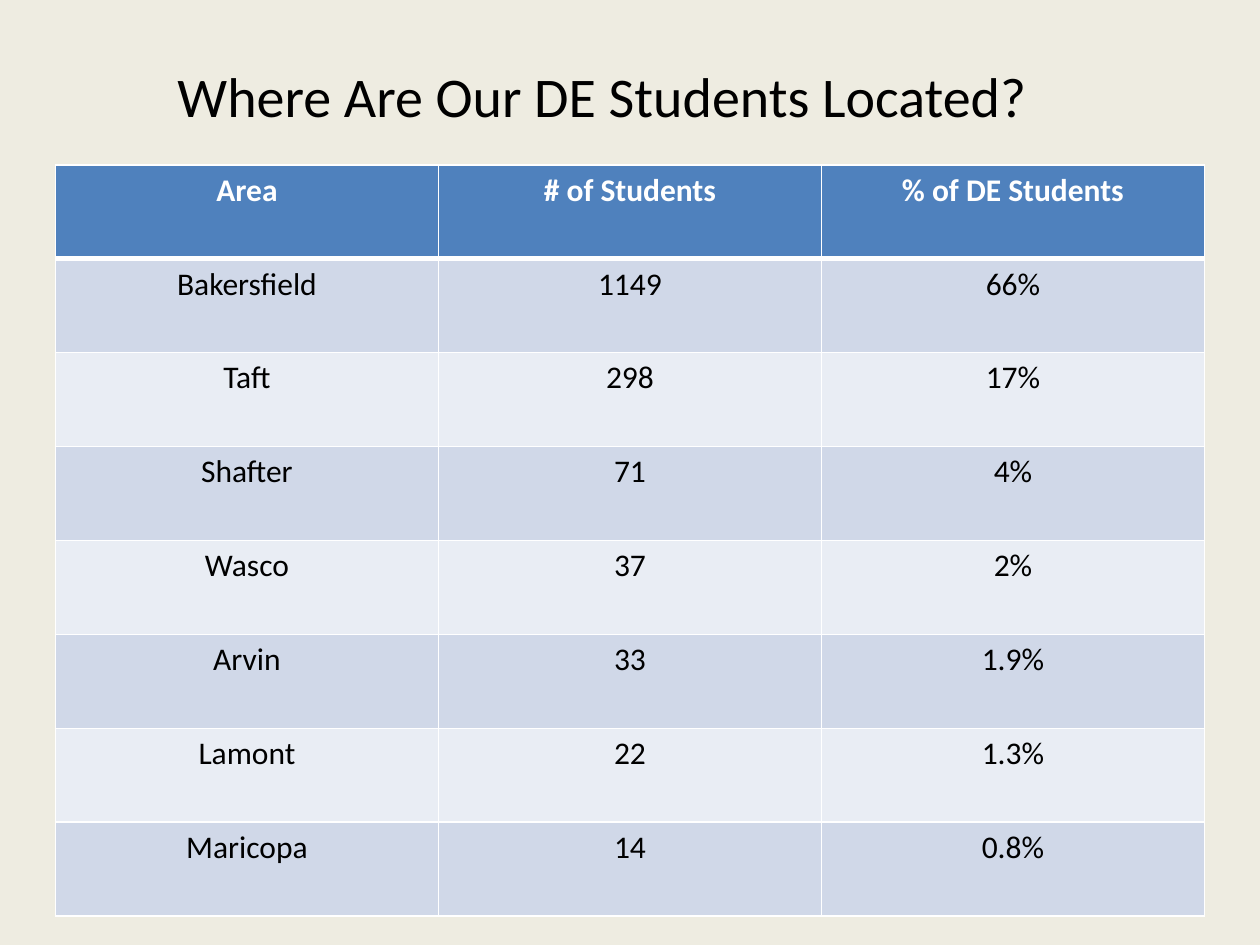
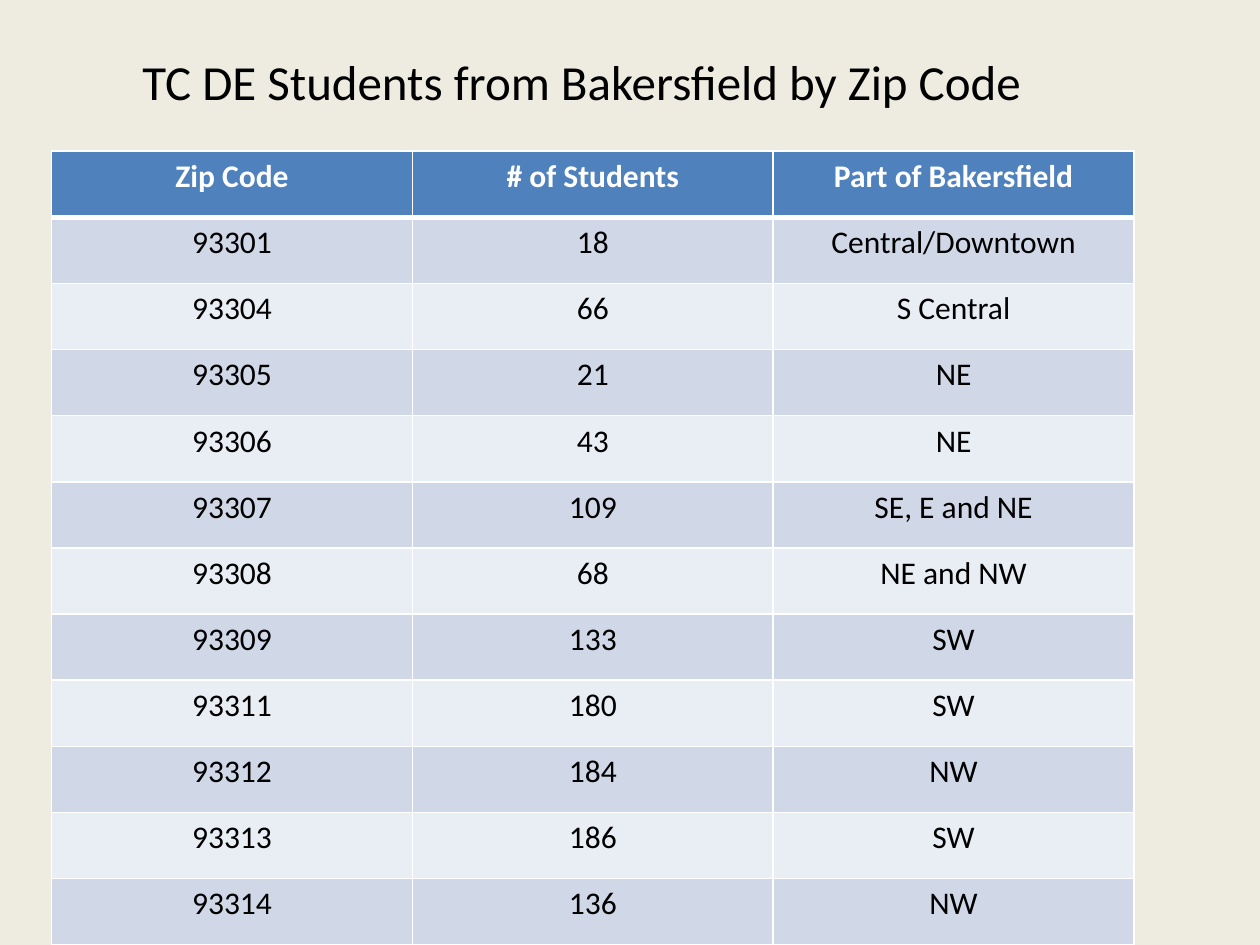
from dataclasses import dataclass

from lxml.etree import SubElement
from pptx import Presentation
from pptx.dml.color import RGBColor as RGB
from pptx.enum.text import MSO_AUTO_SIZE as AutoSize, PP_ALIGN as Align
from pptx.oxml.ns import qn
from pptx.presentation import Presentation as Deck
from pptx.slide import Slide
from pptx.table import _Cell as Cell
from pptx.text.text import _Paragraph as Paragraph
from pptx.util import Pt


@dataclass(frozen=True)
class Theme:
    font: str = "Calibri"
    background: str = "EEECE1"
    text: str = "000000"
    header_fill: str = "4F81BD"
    header_text: str = "FFFFFF"
    bands: tuple[str, str] = ("D0D8E8", "E9EDF4")
    border: str = "FFFFFF"
    thin: float = 1
    thick: float = 3
    table_size: float = 18


THEME = Theme()


@dataclass(frozen=True)
class Box:
    left: float
    top: float
    width: float
    height: float

    def emu(self) -> tuple[Pt, Pt, Pt, Pt]:
        return Pt(self.left), Pt(self.top), Pt(self.width), Pt(self.height)


@dataclass(frozen=True)
class TableSlide:
    title: str
    title_box: Box
    title_size: float
    title_align: Align
    table_box: Box
    header: tuple[str, ...]
    rows: tuple[tuple[str, ...], ...]


SLIDES = (
    TableSlide(
        "Where Are Our DE Students Located?",
        Box(53.3, 31.7, 581.8, 46), 32, Align.CENTER,
        Box(31.7, 94.2, 656.6, 429.4),
        ("Area", "# of Students", "% of DE Students"),
        (
            ("Bakersfield", "1149", "66%"),
            ("Taft", "298", "17%"),
            ("Shafter", "71", "4%"),
            ("Wasco", "37", "2%"),
            ("Arvin", "33", "1.9%"),
            ("Lamont", "22", "1.3%"),
            ("Maricopa", "14", "0.8%"),
        ),
    ),
    TableSlide(
        "TC DE Students from Bakersfield by Zip Code",
        Box(74.2, 25.9, 545.8, 41), 28, Align.LEFT,
        Box(29.5, 86.4, 618.5, 453.6),
        ("Zip Code", "# of Students", "Part of Bakersfield"),
        (
            ("93301", "18", "Central/Downtown"),
            ("93304", "66", "S Central"),
            ("93305", "21", "NE"),
            ("93306", "43", "NE"),
            ("93307", "109", "SE, E and NE"),
            ("93308", "68", "NE and NW"),
            ("93309", "133", "SW"),
            ("93311", "180", "SW"),
            ("93312", "184", "NW"),
            ("93313", "186", "SW"),
            ("93314", "136", "NW"),
        ),
    ),
)


def add_run(p: Paragraph, text: str, size: float, color: str, bold: bool = False) -> None:
    r = p.add_run()
    r.text = text
    r.font.name = THEME.font
    r.font.size = Pt(size)
    r.font.bold = bold
    r.font.color.rgb = RGB.from_string(color)


def add_title(s: Slide, content: TableSlide) -> None:
    tf = s.shapes.add_textbox(*content.title_box.emu()).text_frame
    tf.word_wrap = True
    tf.auto_size = AutoSize.SHAPE_TO_FIT_TEXT
    p = tf.paragraphs[0]
    p.alignment = content.title_align
    add_run(p, content.title, content.title_size, THEME.text)


def set_borders(cell: Cell, top: float, bottom: float) -> None:
    """Must run before the cell is filled: the schema puts lines first."""
    tc_pr = cell._tc.get_or_add_tcPr()
    widths = {"a:lnL": THEME.thin, "a:lnR": THEME.thin, "a:lnT": top, "a:lnB": bottom}
    for tag, width in widths.items():
        ln = SubElement(tc_pr, qn(tag), w=str(Pt(width)))
        fill = SubElement(ln, qn("a:solidFill"))
        SubElement(fill, qn("a:srgbClr"), val=THEME.border)


def style_cell(cell: Cell, text: str, row: int) -> None:
    is_header = row == 0
    set_borders(
        cell,
        top=THEME.thick if row == 1 else THEME.thin,
        bottom=THEME.thick if is_header else THEME.thin,
    )
    fill = THEME.header_fill if is_header else THEME.bands[(row - 1) % 2]
    cell.fill.solid()
    cell.fill.fore_color.rgb = RGB.from_string(fill)
    p = cell.text_frame.paragraphs[0]
    p.alignment = Align.CENTER
    color = THEME.header_text if is_header else THEME.text
    add_run(p, text, THEME.table_size, color, bold=is_header)


def add_data_table(s: Slide, content: TableSlide) -> None:
    lines = (content.header, *content.rows)
    box = content.table_box
    table = s.shapes.add_table(len(lines), len(content.header), *box.emu()).table
    for column in table.columns:
        column.width = Pt(box.width / len(content.header))
    for i, line in enumerate(lines):
        table.rows[i].height = Pt(box.height / len(lines))
        for j, text in enumerate(line):
            style_cell(table.cell(i, j), text, i)


def add_table_slide(prs: Deck, content: TableSlide) -> None:
    s = prs.slides.add_slide(prs.slide_layouts[6])
    s.background.fill.solid()
    s.background.fill.fore_color.rgb = RGB.from_string(THEME.background)
    add_title(s, content)
    add_data_table(s, content)


def main() -> None:
    prs = Presentation()
    prs.slide_width, prs.slide_height = Pt(720), Pt(540)
    for content in SLIDES:
        add_table_slide(prs, content)
    prs.save("out.pptx")


if __name__ == "__main__":
    main()
